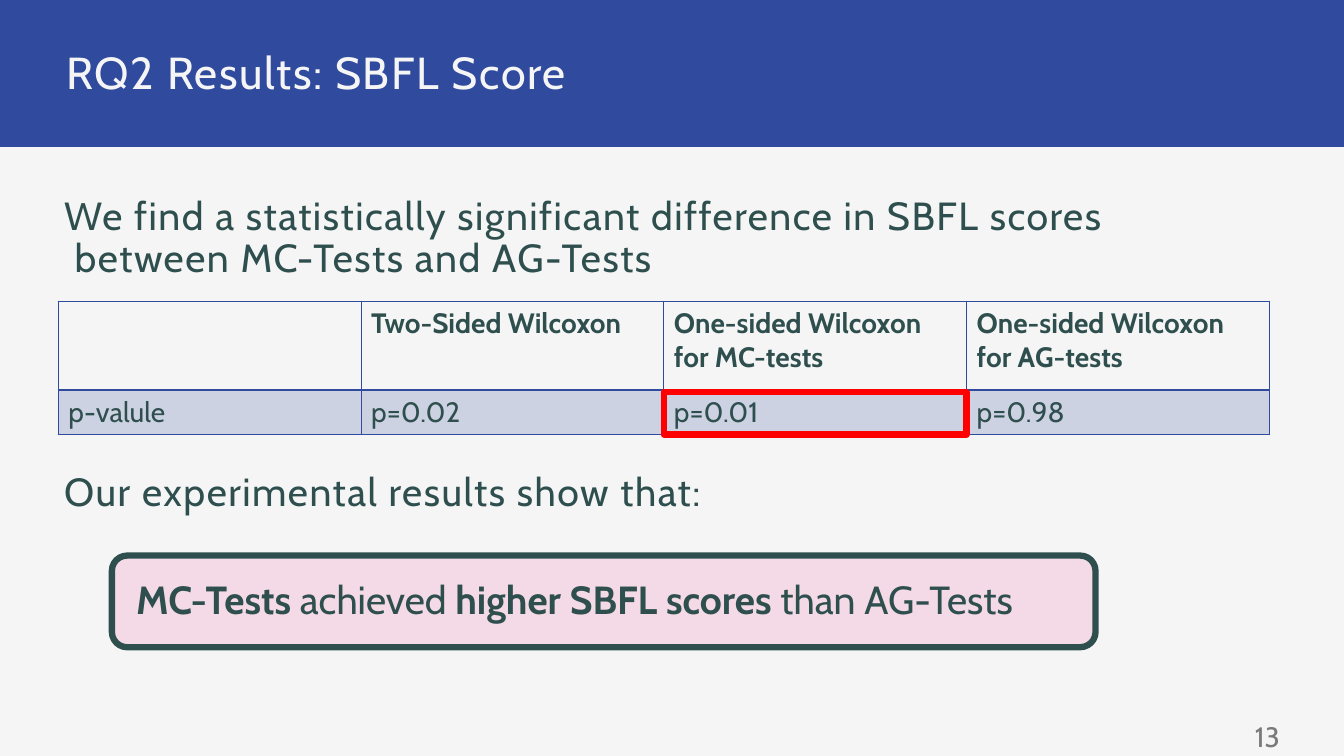
from dataclasses import dataclass

from lxml import etree
from pptx import Presentation
from pptx.dml.color import RGBColor
from pptx.enum.shapes import MSO_SHAPE
from pptx.enum.text import MSO_ANCHOR, PP_ALIGN
from pptx.oxml.ns import qn
from pptx.util import Cm, Pt

RECTANGLE, ROUNDED = MSO_SHAPE.RECTANGLE, MSO_SHAPE.ROUNDED_RECTANGLE
TOP, MIDDLE = MSO_ANCHOR.TOP, MSO_ANCHOR.MIDDLE
LEFT, RIGHT = PP_ALIGN.LEFT, PP_ALIGN.RIGHT

FONT = "Cabin"
BLUE, PAPER, SLATE = "304A9E", "F5F5F5", "2F4F4F"
PINK, RED, GREY = "F4DAE6", "FF0000", "7A7A7A"

# Table geometry in centimetres
TABLE_LEFT, TABLE_TOP = 1.47, 7.59
COLUMN_WIDTH = 7.63
HEADER_HEIGHT, VALUE_HEIGHT = 2.24, 1.11
HEADERS = ["", "Two-Sided Wilcoxon", "One-sided Wilcoxon for MC-tests",
           "One-sided Wilcoxon\nfor AG-tests"]
VALUES = ["p-valule", "p=0.02", "p=0.01", "p=0.98"]
HIGHLIGHTED_COLUMN = 2


@dataclass
class Box:
    left: float
    top: float
    width: float
    height: float


@dataclass
class Label:
    text: str
    box: Box
    size: float
    color: str = SLATE
    inset: float = 0.15
    tracking: float = 1.1
    line_spacing: float = 0.9
    align: PP_ALIGN = LEFT
    anchor: MSO_ANCHOR = TOP


@dataclass
class Panel:
    kind: MSO_SHAPE
    box: Box
    fill: str = ""
    line: str = ""


LABELS = [
    Label("RQ2 Results: SBFL Score", Box(1.47, 1.09, 30.94, 1.5), 32, PAPER, inset=0.2),
    Label("We find a statistically significant difference in SBFL scores\v"
          " between MC-Tests and AG-Tests", Box(1.47, 4.8, 30.94, 2.5), 28),
    Label("Our experimental results show that:", Box(1.47, 11.76, 30.94, 1.5), 28),
    Label("13", Box(24.79, 18.06, 7.62, 0.99), 20, GREY, tracking=0,
          line_spacing=1, align=RIGHT, anchor=MIDDLE),
]

BANNER = Panel(RECTANGLE, Box(0, 0, 33.87, 3.7), fill=BLUE)
HIGHLIGHT = Panel(
    RECTANGLE,
    Box(TABLE_LEFT + HIGHLIGHTED_COLUMN * COLUMN_WIDTH, TABLE_TOP + HEADER_HEIGHT + 0.05,
        COLUMN_WIDTH, 1.07),
    line=RED)
CONCLUSION = Panel(ROUNDED, Box(2.82, 14, 24.79, 2.31), fill=PINK, line=SLATE)
CONCLUSION_RUNS = [("MC-Tests", True), (" achieved ", False),
                   ("higher SBFL scores ", True), ("than AG-Tests", False)]


def rgb(color: str) -> RGBColor:
    return RGBColor.from_string(color)


def place(box: Box) -> tuple:
    return Cm(box.left), Cm(box.top), Cm(box.width), Cm(box.height)


def format_run(run, size: float, color: str, bold: bool = False) -> None:
    run.font.name = FONT
    run.font.size = Pt(size)
    run.font.bold = bold
    run.font.color.rgb = rgb(color)


def set_insets(text_frame, inset: float) -> None:
    text_frame.margin_left = text_frame.margin_right = Cm(inset)
    text_frame.margin_top = text_frame.margin_bottom = Cm(inset)
    text_frame.word_wrap = True


def add_label(slide, label: Label) -> None:
    text_frame = slide.shapes.add_textbox(*place(label.box)).text_frame
    set_insets(text_frame, label.inset)
    text_frame.vertical_anchor = label.anchor
    text_frame.text = label.text
    paragraph = text_frame.paragraphs[0]
    paragraph.alignment = label.align
    paragraph.line_spacing = label.line_spacing
    for run in paragraph.runs:
        format_run(run, label.size, label.color)
        if label.tracking:
            run.font._element.set("spc", str(round(label.tracking * 100)))


def add_panel(slide, panel: Panel):
    shape = slide.shapes.add_shape(panel.kind, *place(panel.box))
    shape.shadow.inherit = False
    if panel.fill:
        shape.fill.solid()
        shape.fill.fore_color.rgb = rgb(panel.fill)
    else:
        shape.fill.background()
    if panel.line:
        shape.line.color.rgb = rgb(panel.line)
        shape.line.width = Pt(4.5)
    else:
        shape.line.fill.background()
    return shape


def set_borders(cell, top: float, bottom: float) -> None:
    properties = cell._tc.get_or_add_tcPr()
    widths = {"a:lnL": 1, "a:lnR": 1, "a:lnT": top, "a:lnB": bottom}
    for position, (tag, width) in enumerate(widths.items()):
        border = etree.Element(qn(tag), w=str(Pt(width)))
        fill = etree.SubElement(border, qn("a:solidFill"))
        etree.SubElement(fill, qn("a:srgbClr"), val=BLUE)
        properties.insert(position, border)


def tint_cell(cell, color: str, percent: int) -> None:
    cell.fill.solid()
    cell.fill.fore_color.rgb = rgb(color)
    color_element = cell._tc.tcPr.find(qn("a:solidFill")).find(qn("a:srgbClr"))
    etree.SubElement(color_element, qn("a:alpha"), val=str(percent * 1000))


def add_results_table(slide) -> None:
    box = Box(TABLE_LEFT, TABLE_TOP, COLUMN_WIDTH * len(HEADERS),
              HEADER_HEIGHT + VALUE_HEIGHT)
    table = slide.shapes.add_table(2, len(HEADERS), *place(box)).table
    table.first_row = table.horz_banding = False
    for column in table.columns:
        column.width = Cm(COLUMN_WIDTH)
    table.rows[0].height, table.rows[1].height = Cm(HEADER_HEIGHT), Cm(VALUE_HEIGHT)
    for row, texts in enumerate((HEADERS, VALUES)):
        is_header = row == 0
        for column, text in enumerate(texts):
            cell = table.cell(row, column)
            cell.text_frame.text = text
            for paragraph in cell.text_frame.paragraphs:
                for run in paragraph.runs:
                    format_run(run, 20, SLATE, bold=is_header)
            if is_header:
                cell.fill.background()
                set_borders(cell, top=1, bottom=2)
            else:
                tint_cell(cell, BLUE, 20)
                set_borders(cell, top=2, bottom=1)


def add_conclusion(slide) -> None:
    text_frame = add_panel(slide, CONCLUSION).text_frame
    set_insets(text_frame, 0.5)
    text_frame.vertical_anchor = MIDDLE
    paragraph = text_frame.paragraphs[0]
    paragraph.alignment = LEFT
    paragraph.line_spacing = 0.9
    paragraph.space_before, paragraph.space_after = Pt(3), Pt(1)
    for text, bold in CONCLUSION_RUNS:
        run = paragraph.add_run()
        run.text = text
        format_run(run, 28, SLATE, bold)


def main() -> None:
    presentation = Presentation()
    presentation.slide_width, presentation.slide_height = Cm(33.87), Cm(19.05)
    slide = presentation.slides.add_slide(presentation.slide_layouts[6])
    slide.background.fill.solid()
    slide.background.fill.fore_color.rgb = rgb(PAPER)

    # Banner and text
    add_panel(slide, BANNER)
    for label in LABELS:
        add_label(slide, label)

    # Test results with the significant value framed
    add_results_table(slide)
    add_panel(slide, HIGHLIGHT)

    # Conclusion
    add_conclusion(slide)
    presentation.save("out.pptx")


if __name__ == "__main__":
    main()
